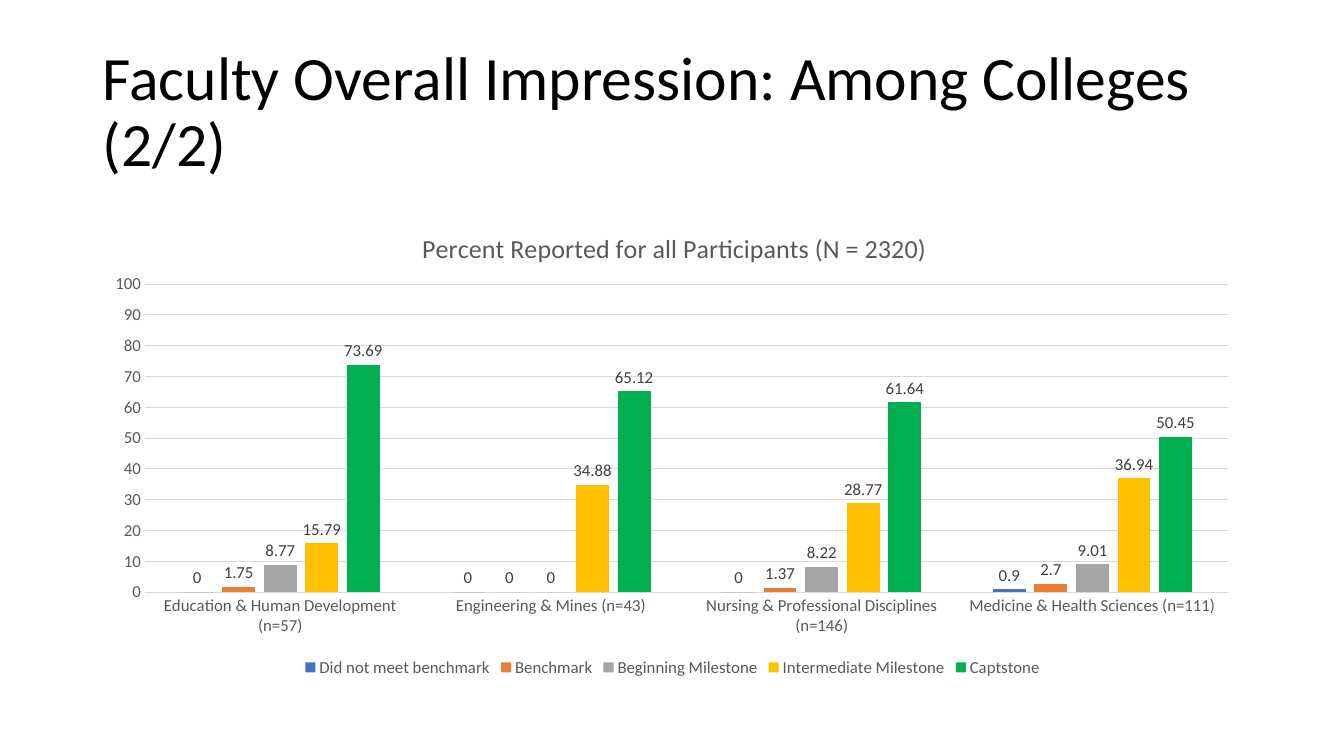
from dataclasses import dataclass

from lxml import etree
from pptx import Presentation
from pptx.chart.data import CategoryChartData
from pptx.dml.color import RGBColor
from pptx.enum.chart import XL_CHART_TYPE, XL_LABEL_POSITION, XL_LEGEND_POSITION, XL_TICK_MARK
from pptx.enum.text import MSO_ANCHOR
from pptx.oxml.ns import qn
from pptx.util import Inches, Pt

COLUMN = XL_CHART_TYPE.COLUMN_CLUSTERED
OUTSIDE = XL_LABEL_POSITION.OUTSIDE_END
BOTTOM = XL_LEGEND_POSITION.BOTTOM
NO_TICK = XL_TICK_MARK.NONE
MIDDLE = MSO_ANCHOR.MIDDLE


@dataclass(frozen=True)
class Theme:
    """Colours, font and type sizes of the slide."""
    font: str = "Calibri"
    ink: str = "000000"
    soft: str = "595959"
    label: str = "404040"
    grid: str = "D9D9D9"
    head: float = 44
    title: float = 18.6
    small: float = 12
    rule: float = 0.75


THEME = Theme()
COLLEGES = (
    "Education & Human Development (n=57)",
    "Engineering & Mines (n=43)",
    "Nursing & Professional Disciplines (n=146)",
    "Medicine & Health Sciences (n=111)",
)
LEVELS = (
    ("Did not meet benchmark", "4472C4", (0, 0, 0, 0.9)),
    ("Benchmark", "ED7D31", (1.75, 0, 1.37, 2.7)),
    ("Beginning Milestone", "A5A5A5", (8.77, 0, 8.22, 9.01)),
    ("Intermediate Milestone", "FFC000", (15.79, 34.88, 28.77, 36.94)),
    ("Captstone", "00B050", (73.69, 65.12, 61.64, 50.45)),
)


def set_font(font, size, color):
    """Apply the theme font at a size and colour."""
    font.name = THEME.font
    font.size = Pt(size)
    font.bold = False
    font.color.rgb = RGBColor.from_string(color)


def set_line(line):
    """Draw a thin grey rule."""
    line.width = Pt(THEME.rule)
    line.color.rgb = RGBColor.from_string(THEME.grid)


def add_run(para, text, size, color):
    """Add one styled run to a paragraph."""
    run = para.add_run()
    run.text = text
    set_font(run.font, size, color)


def add_head(slide, text):
    """Add the slide heading."""
    box = slide.shapes.add_textbox(Inches(0.92), Inches(0.4), Inches(11.5), Inches(1.45))
    frame = box.text_frame
    frame.word_wrap = True
    frame.vertical_anchor = MIDDLE
    para = frame.paragraphs[0]
    para.line_spacing = 0.9
    add_run(para, text, THEME.head, THEME.ink)


def place(node, after, **marks):
    """Give a chart part a fixed layout, set after the named child."""
    for old in node.findall(qn("c:layout")):
        node.remove(old)
    layout = etree.Element(qn("c:layout"))
    manual = etree.SubElement(layout, qn("c:manualLayout"))
    for name, value in marks.items():
        etree.SubElement(manual, qn(f"c:{name}")).set("val", str(value))
    spot = 0 if after is None else node.index(node.find(qn(after))) + 1
    node.insert(spot, layout)


def style_axes(chart):
    """Style both axes and the grid."""
    for axis in (chart.category_axis, chart.value_axis):
        axis.major_tick_mark = axis.minor_tick_mark = NO_TICK
        set_font(axis.tick_labels.font, THEME.small, THEME.soft)
    set_line(chart.category_axis.format.line)
    scale = chart.value_axis
    scale.minimum_scale, scale.maximum_scale, scale.major_unit = 0, 100, 10
    scale.format.line.fill.background()
    set_line(scale.major_gridlines.format.line)


def style_bars(plot):
    """Colour and label each series."""
    plot.gap_width, plot.overlap = 219, -27
    plot.vary_by_categories = False
    for series, (_, color, _) in zip(plot.series, LEVELS):
        series.format.fill.solid()
        series.format.fill.fore_color.rgb = RGBColor.from_string(color)
        series.invert_if_negative = False
        labels = series.data_labels
        labels.show_value = True
        labels.position = OUTSIDE
        set_font(labels.font, THEME.small, THEME.label)


def add_bars(slide, title):
    """Add the clustered column chart."""
    data = CategoryChartData()
    data.categories = COLLEGES
    for name, _, values in LEVELS:
        data.add_series(name, values)
    chart = slide.shapes.add_chart(
        COLUMN, Inches(0.92), Inches(2), Inches(11.5), Inches(4.76), data).chart
    set_font(chart.font, THEME.small, THEME.soft)
    chart.has_title = True
    heading = chart.chart_title
    add_run(heading.text_frame.paragraphs[0], title, THEME.title, THEME.soft)
    heading.include_in_layout = False
    chart.has_legend = True
    chart.legend.position = BOTTOM
    chart.legend.include_in_layout = False
    set_font(chart.legend.font, THEME.small, THEME.soft)
    style_axes(chart)
    style_bars(chart.plots[0])
    root = chart.element
    place(root.find(".//" + qn("c:title")), "c:tx",
          xMode="edge", yMode="edge", x=0.28, y=0.05)
    place(root.find(".//" + qn("c:plotArea")), None, layoutTarget="inner",
          xMode="edge", yMode="edge", x=0.045, y=0.172, w=0.934, h=0.642)


def main():
    """Build and save the slide."""
    deck = Presentation()
    deck.slide_width, deck.slide_height = Inches(13.33), Inches(7.5)
    slide = deck.slides.add_slide(deck.slide_layouts[6])
    add_head(slide, "Faculty Overall Impression: Among Colleges (2/2)")
    add_bars(slide, "Percent Reported for all Participants (N = 2320)")
    deck.save("out.pptx")


if __name__ == "__main__":
    main()
